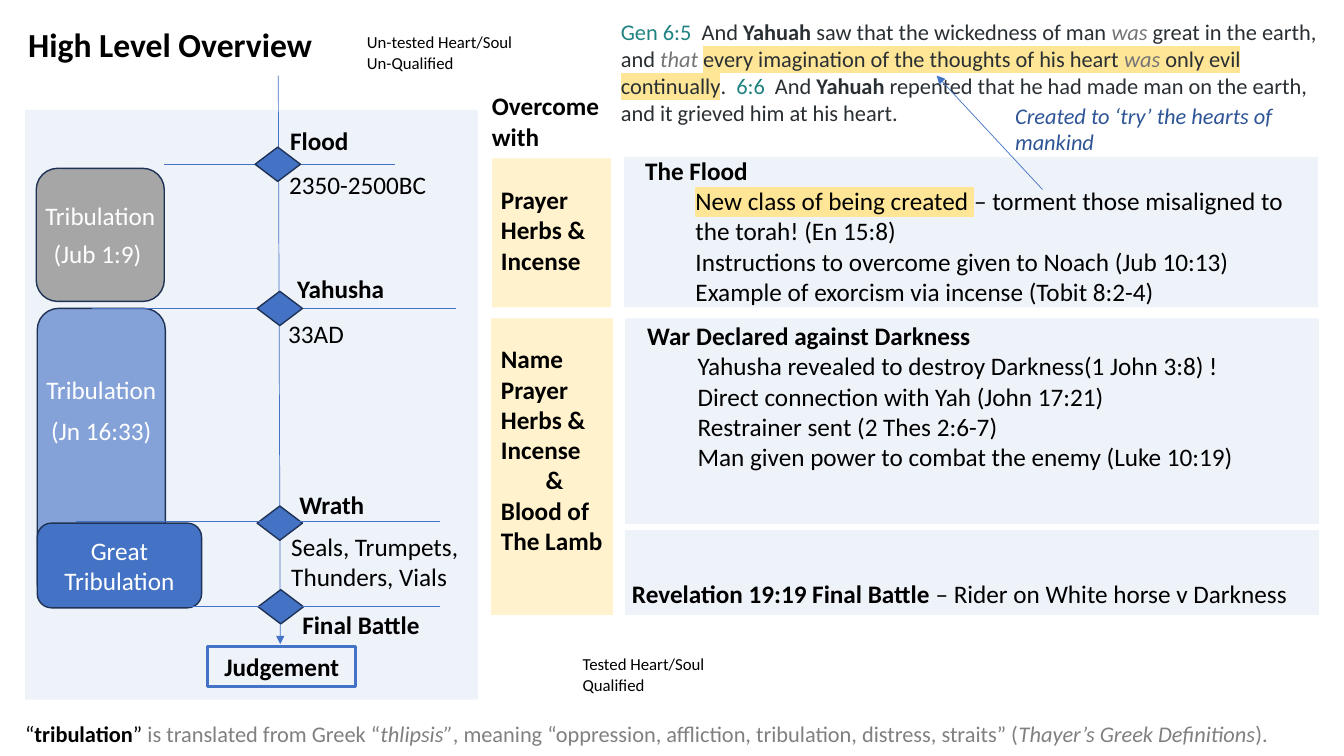
from lxml import etree
from pptx import Presentation
from pptx.dml.color import RGBColor
from pptx.enum.shapes import MSO_CONNECTOR, MSO_SHAPE as Preset
from pptx.enum.text import MSO_ANCHOR as Anchor, PP_ALIGN as Align
from pptx.oxml.ns import qn
from pptx.util import Inches, Pt

BLACK = RGBColor(0x00, 0x00, 0x00)
WHITE = RGBColor(0xFF, 0xFF, 0xFF)
PALE_BLUE = RGBColor(0xEE, 0xF2, 0xF9)
CREAM = RGBColor(0xFF, 0xF2, 0xCC)
BLUE = RGBColor(0x44, 0x72, 0xC4)
LIGHT_BLUE = RGBColor(0x84, 0xA2, 0xD8)
NAVY = RGBColor(0x1E, 0x32, 0x56)
NOTE_BLUE = RGBColor(0x2F, 0x55, 0x97)
SILVER = RGBColor(0xA6, 0xA6, 0xA6)
GRAY = RGBColor(0x80, 0x80, 0x80)
VERSE = RGBColor(0x29, 0x2F, 0x33)
VERSE_GRAY = RGBColor(0x75, 0x75, 0x75)
TEAL = RGBColor(0x21, 0x82, 0x82)
YELLOW = RGBColor(0xFF, 0xE6, 0x97)

BOLD = {"bold": True}
WAS = {"italic": True, "color": VERSE_GRAY}
MARKED = {"highlight": YELLOW}


def add_run(paragraph, text, style):
    run = paragraph.add_run()
    run.text = text
    settings = {"name": "Calibri", "size": Pt(18), "bold": False, "italic": False, **style}
    color = settings.pop("color", BLACK)
    highlight = settings.pop("highlight", None)
    for name, value in settings.items():
        setattr(run.font, name, value)
    run.font.color.rgb = color
    if highlight is not None:
        mark = etree.Element(qn("a:highlight"))
        etree.SubElement(mark, qn("a:srgbClr"), val=str(highlight))
        run.font.fill._xPr.find(qn("a:solidFill")).addnext(mark)


def write(shape, paragraphs, style=None, indent_from=None, paragraph_format=None, **frame_format):
    frame = shape.text_frame
    for name, value in {"word_wrap": True, **frame_format}.items():
        setattr(frame, name, value)
    for index, runs in enumerate(paragraphs):
        paragraph = frame.paragraphs[0] if index == 0 else frame.add_paragraph()
        for name, value in (paragraph_format or {}).items():
            setattr(paragraph, name, value)
        if indent_from is not None and index >= indent_from:
            paragraph.level = 1
            paragraph._p.get_or_add_pPr().set("marL", str(Inches(0.5)))
        for run in [runs] if isinstance(runs, str) else runs:
            text, changes = (run, {}) if isinstance(run, str) else run
            add_run(paragraph, text, {**(style or {}), **changes})


def add_text(slide, box, paragraphs, style=None, **options):
    shape = slide.shapes.add_textbox(*map(Inches, box))
    write(shape, paragraphs, style, **options)
    return shape


def add_box(slide, preset, box, fill=None, line=None, width=1):
    shape = slide.shapes.add_shape(preset, *map(Inches, box))
    shape.shadow.inherit = False
    if fill is None:
        shape.fill.background()
    else:
        shape.fill.solid()
        shape.fill.fore_color.rgb = fill
    if line is None:
        shape.line.fill.background()
    else:
        shape.line.color.rgb = line
        shape.line.width = Pt(width)
    return shape


def add_line(slide, start, end, arrow=False):
    line = slide.shapes.add_connector(MSO_CONNECTOR.STRAIGHT, *map(Inches, (*start, *end)))
    line.line.color.rgb = BLUE
    line.line.width = Pt(0.5)
    if arrow:
        etree.SubElement(line.line._get_or_add_ln(), qn("a:tailEnd"), type="triangle")
    etree.SubElement(line._element.spPr, qn("a:effectLst"))


def add_tribulation(slide, box, fill, verse, top, gap):
    shape = add_box(slide, Preset.ROUNDED_RECTANGLE, box, fill, NAVY)
    write(shape, ["Tribulation", verse], {"color": WHITE},
          paragraph_format={"alignment": Align.CENTER},
          vertical_anchor=Anchor.TOP, margin_left=0, margin_right=0, margin_top=Inches(top))
    shape.text_frame.paragraphs[1].space_before = Pt(gap)


def add_title(slide):
    title = slide.shapes.title
    title.left, title.top, title.width, title.height = map(Inches, (0.18, 0.15, 3.48, 0.62))
    write(title, ["High Level Overview"], {"bold": True, "size": Pt(24)},
          paragraph_format={"alignment": Align.LEFT, "line_spacing": 0.9},
          vertical_anchor=Anchor.MIDDLE)


def add_timeline(slide):
    add_tribulation(slide, (0.37, 3.06, 1.27, 2.94), LIGHT_BLUE, "(Jn 16:33)", 0.59, 8)
    add_line(slide, (2.76, 0.75), (2.78, 6.39), arrow=True)
    for left, right, y in ((1.63, 3.92, 1.63), (0.91, 4.52, 3.06)):
        add_line(slide, (left, y), (right, y))
    great = add_box(slide, Preset.ROUNDED_RECTANGLE, (0.37, 5.19, 1.63, 0.84), BLUE, NAVY)
    write(great, ["Great Tribulation"], {"color": WHITE},
          paragraph_format={"alignment": Align.CENTER}, vertical_anchor=Anchor.MIDDLE)
    add_tribulation(slide, (0.36, 1.67, 1.27, 1.32), SILVER, "(Jub 1:9) ", 0.26, 5)
    for left, top in ((2.53, 1.46), (2.55, 2.89), (2.55, 5.02), (2.56, 5.85)):
        add_box(slide, Preset.FLOWCHART_DECISION, (left, top, 0.45, 0.34), BLUE, NAVY)
    for y in (5.17, 6.02):
        add_line(slide, (0.75, y), (4.36, y))
    for left, top, event in ((2.78, 1.19, "Flood"), (2.85, 2.66, "Yahusha"),
                             (2.87, 4.81, "Wrath"), (2.9, 6, "Final Battle")):
        add_text(slide, (left, top, 1.66, 0.4), [event], BOLD)
    for left, top, details in ((2.77, 1.63, ["2350-2500BC"]), (2.76, 3.11, ["33AD"]),
                               (2.79, 5.22, ["Seals, Trumpets,", "Thunders, Vials"])):
        add_text(slide, (left, top, 1.95, 0.4 * len(details)), details)
    judgement = add_box(slide, Preset.RECTANGLE, (2.06, 6.41, 1.47, 0.4), None, BLUE, 2.25)
    write(judgement, ["Judgement"], BOLD,
          paragraph_format={"alignment": Align.CENTER}, vertical_anchor=Anchor.MIDDLE)


def add_overcoming(slide):
    add_text(slide, (4.78, 0.85, 1.62, 0.71), ["Overcome with"], BOLD)
    add_text(slide, (4.87, 1.78, 1.26, 1.01), ["Prayer", "Herbs & Incense"], BOLD)
    means = add_text(slide, (4.87, 3.36, 1.26, 2.22),
                     ["Name", "Prayer", "Herbs & Incense", "&", "Blood of", "The Lamb"], BOLD)
    means.text_frame.paragraphs[3].alignment = Align.CENTER


def add_events(slide):
    add_text(slide, (6.3, 1.49, 6.64, 1.62), [
        [("The Flood", BOLD)],
        [("New class of being created ", MARKED),
         "– torment those misaligned to the torah! (En 15:8)"],
        "Instructions to overcome given to Noach (Jub 10:13)",
        "Example of exorcism via incense (Tobit 8:2-4)"], indent_from=1)
    add_text(slide, (6.32, 3.13, 6.65, 1.62), [
        [("War Declared against Darkness", BOLD)],
        "Yahusha revealed to destroy Darkness(1 John 3:8) !",
        "Direct connection with Yah (John 17:21)",
        "Restrainer sent (2 Thes 2:6-7)",
        "Man given power to combat the enemy (Luke 10:19)"], indent_from=1)
    add_text(slide, (6.17, 5.69, 6.9, 0.4), [
        [("Revelation 19:19 Final Battle ", BOLD), "– Rider on White horse v Darkness"]])


def add_scripture(slide):
    add_text(slide, (6.06, 0.13, 7.29, 1.18), [[
        ("Gen 6:5", {"color": TEAL}), "  And ", ("Yahuah", BOLD),
        " saw that the wickedness of man ", ("was", WAS), " great in the earth, and ",
        ("that ", WAS), ("every imagination of the thoughts of his heart ", MARKED),
        ("was", {**WAS, **MARKED}), (" only evil continually", MARKED), ".  ",
        ("6:6", {"color": TEAL}), "  And ", ("Yahuah", BOLD),
        " repented that he had made man on the earth, and it grieved him at his heart. "]],
        {"size": Pt(16), "color": VERSE})
    add_line(slide, (10.34, 1.88), (9.29, 0.75), arrow=True)
    add_text(slide, (9.97, 0.96, 3, 0.64), ["Created to ‘try’ the hearts of mankind"],
             {"size": Pt(16), "italic": True, "color": NOTE_BLUE})


def add_notes_on_terms(slide):
    for box, lines in (((3.54, 0.27, 2.05, 0.5), ["Un-tested Heart/Soul", "Un-Qualified"]),
                       ((5.68, 6.44, 1.78, 0.5), ["Tested Heart/Soul", "Qualified"])):
        add_text(slide, box, lines, {"size": Pt(12)})
    black = {"color": BLACK}
    italic = {"italic": True}
    add_text(slide, (0.15, 7.1, 13.22, 0.37), [[
        ("“", black), ("tribulation", {**black, **BOLD}), ("” ", black),
        "is translated from Greek “", ("thlipsis”", italic),
        ", meaning “oppression, affliction, tribulation, distress, straits” (",
        ("Thayer’s Greek Definitions", italic), ")."]], {"size": Pt(16), "color": GRAY})


def main():
    presentation = Presentation()
    presentation.slide_width, presentation.slide_height = Inches(13.33), Inches(7.5)
    slide = presentation.slides.add_slide(presentation.slide_layouts[5])
    add_title(slide)
    for box, fill in (((6.19, 1.56, 6.88, 1.49), PALE_BLUE), ((6.2, 3.16, 6.88, 2.04), PALE_BLUE),
                      ((6.2, 5.26, 6.88, 0.84), PALE_BLUE), ((0.25, 1.09, 4.49, 5.85), PALE_BLUE),
                      ((4.88, 1.57, 1.18, 1.48), CREAM), ((4.87, 3.16, 1.21, 2.94), CREAM)):
        add_box(slide, Preset.RECTANGLE, box, fill)
    add_timeline(slide)
    add_overcoming(slide)
    add_events(slide)
    add_scripture(slide)
    add_notes_on_terms(slide)
    presentation.save("out.pptx")


if __name__ == "__main__":
    main()
